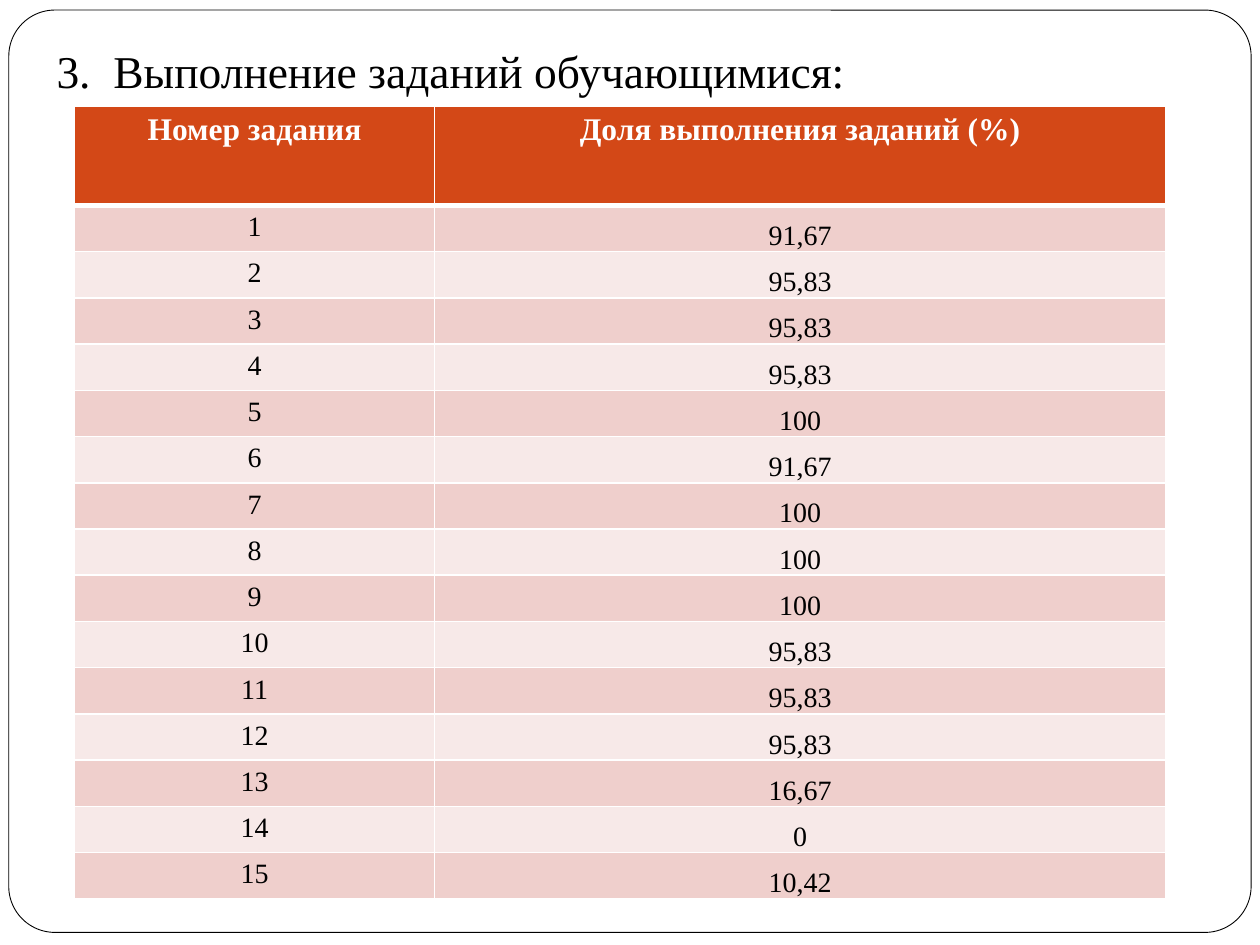
from dataclasses import dataclass

from lxml import etree
from pptx import Presentation
from pptx.dml.color import RGBColor
from pptx.enum.shapes import MSO_SHAPE
from pptx.enum.text import MSO_ANCHOR, MSO_AUTO_SIZE, PP_ALIGN
from pptx.oxml.ns import qn
from pptx.util import Inches, Pt

ROUNDED = MSO_SHAPE.ROUNDED_RECTANGLE
CENTER, LEFT = PP_ALIGN.CENTER, PP_ALIGN.LEFT
TOP, BOTTOM = MSO_ANCHOR.TOP, MSO_ANCHOR.BOTTOM
GROW = MSO_AUTO_SIZE.SHAPE_TO_FIT_TEXT

SLIDE_WIDTH, SLIDE_HEIGHT = Inches(10), Inches(7.5)
GRID_COLUMNS, GRID_ROWS = 100, 75


@dataclass(frozen=True)
class Theme:
    font: str = "Times New Roman"
    ink: str = "000000"
    paper: str = "FFFFFF"
    header: str = "D34817"
    bands: tuple[str, str] = ("EFCFCC", "F7E9E8")
    title_size: int = 26
    header_size: int = 18
    body_size: int = 16


@dataclass(frozen=True)
class Area:
    column: float
    row: float
    columns: float
    rows: float

    def box(self) -> tuple[int, int, int, int]:
        return (across(self.column), down(self.row), across(self.columns), down(self.rows))


@dataclass(frozen=True)
class TextStyle:
    size: int
    color: str
    bold: bool = False
    align: PP_ALIGN = CENTER


@dataclass(frozen=True)
class CellStyle:
    text: TextStyle
    fill: str
    format: dict
    top: float = 1
    bottom: float = 1


@dataclass(frozen=True)
class TaskResult:
    number: int
    share: str


THEME = Theme()
FRAME = Area(0.7, 0.8, 98.6, 73.2)
TITLE = Area(3.5, 2.9, 96.5, 5.4)
TABLE = Area(5.9, 8.4, 86.6, 62.9)
NUMBER_COLUMNS, HEADER_ROWS = 28.6, 7.9
HEADINGS = ("Номер задания", "Доля выполнения заданий (%)")
SHARES = (
    "91,67", "95,83", "95,83", "95,83", "100",
    "91,67", "100", "100", "100", "95,83",
    "95,83", "95,83", "16,67", "0", "10,42",
)
RESULTS = [TaskResult(number, share) for number, share in enumerate(SHARES, 1)]
NUMBER_FORMAT = {"vertical_anchor": TOP}
SHARE_FORMAT = {
    "vertical_anchor": BOTTOM,
    "margin_left": Inches(0.01),
    "margin_top": Inches(0.01),
    "margin_right": Inches(0.01),
    "margin_bottom": 0,
}


def across(columns: float) -> int:
    return round(SLIDE_WIDTH * columns / GRID_COLUMNS)


def down(rows: float) -> int:
    return round(SLIDE_HEIGHT * rows / GRID_ROWS)


def apply(target, values: dict) -> None:
    for name, value in values.items():
        setattr(target, name, value)


def write(frame, text: str, style: TextStyle) -> None:
    para = frame.paragraphs[0]
    para.alignment = style.align
    span = para.add_run()
    span.text = text
    apply(span.font, {"name": THEME.font, "size": Pt(style.size), "bold": style.bold})
    span.font.color.rgb = RGBColor.from_string(style.color)


def draw_frame(page) -> None:
    shape = page.shapes.add_shape(ROUNDED, *FRAME.box())
    shape.shadow.inherit = False
    shape.adjustments[0] = 0.05
    shape.fill.solid()
    shape.fill.fore_color.rgb = RGBColor.from_string(THEME.paper)
    shape.line.color.rgb = RGBColor.from_string(THEME.ink)
    shape.line.width = Pt(0.5)


def draw_title(page) -> None:
    box = page.shapes.add_textbox(*TITLE.box())
    apply(box.text_frame, {"word_wrap": True, "auto_size": GROW})
    style = TextStyle(THEME.title_size, THEME.ink, align=LEFT)
    write(box.text_frame, "3.  Выполнение заданий обучающимися:", style)
    properties = box.text_frame.paragraphs[0]._p.get_or_add_pPr()
    properties.set("marL", str(across(5.6)))
    properties.set("indent", str(-across(5.6)))


def draw_borders(cell, style: CellStyle) -> None:
    widths = {"a:lnL": 1, "a:lnR": 1, "a:lnT": style.top, "a:lnB": style.bottom}
    properties = cell._tc.get_or_add_tcPr()
    for position, (tag, width) in enumerate(widths.items()):
        line = etree.Element(qn(tag), w=str(Pt(width)))
        fill = etree.SubElement(line, qn("a:solidFill"))
        etree.SubElement(fill, qn("a:srgbClr"), val=THEME.paper)
        properties.insert(position, line)


def fill_cell(cell, text: str, style: CellStyle) -> None:
    write(cell.text_frame, text, style.text)
    apply(cell, style.format)
    cell.fill.solid()
    cell.fill.fore_color.rgb = RGBColor.from_string(style.fill)
    draw_borders(cell, style)


def draw_table(page) -> None:
    table = page.shapes.add_table(len(RESULTS) + 1, len(HEADINGS), *TABLE.box()).table
    for column, width in zip(table.columns, (NUMBER_COLUMNS, TABLE.columns - NUMBER_COLUMNS)):
        column.width = across(width)
    body_rows = (TABLE.rows - HEADER_ROWS) / len(RESULTS)
    for row, height in zip(table.rows, [HEADER_ROWS] + [body_rows] * len(RESULTS)):
        row.height = down(height)

    header_text = TextStyle(THEME.header_size, THEME.paper, bold=True)
    header = CellStyle(header_text, THEME.header, NUMBER_FORMAT, bottom=3)
    for column, heading in enumerate(HEADINGS):
        fill_cell(table.cell(0, column), heading, header)

    body_text = TextStyle(THEME.body_size, THEME.ink)
    for row, result in enumerate(RESULTS, 1):
        band = THEME.bands[(row - 1) % len(THEME.bands)]
        top = 3 if row == 1 else 1
        entries = ((str(result.number), NUMBER_FORMAT), (result.share, SHARE_FORMAT))
        for column, (text, cell_format) in enumerate(entries):
            fill_cell(table.cell(row, column), text, CellStyle(body_text, band, cell_format, top))


def main() -> None:
    deck = Presentation()
    apply(deck, {"slide_width": SLIDE_WIDTH, "slide_height": SLIDE_HEIGHT})
    page = deck.slides.add_slide(deck.slide_layouts[6])
    draw_frame(page)
    draw_title(page)
    draw_table(page)
    deck.save("out.pptx")


if __name__ == "__main__":
    main()
